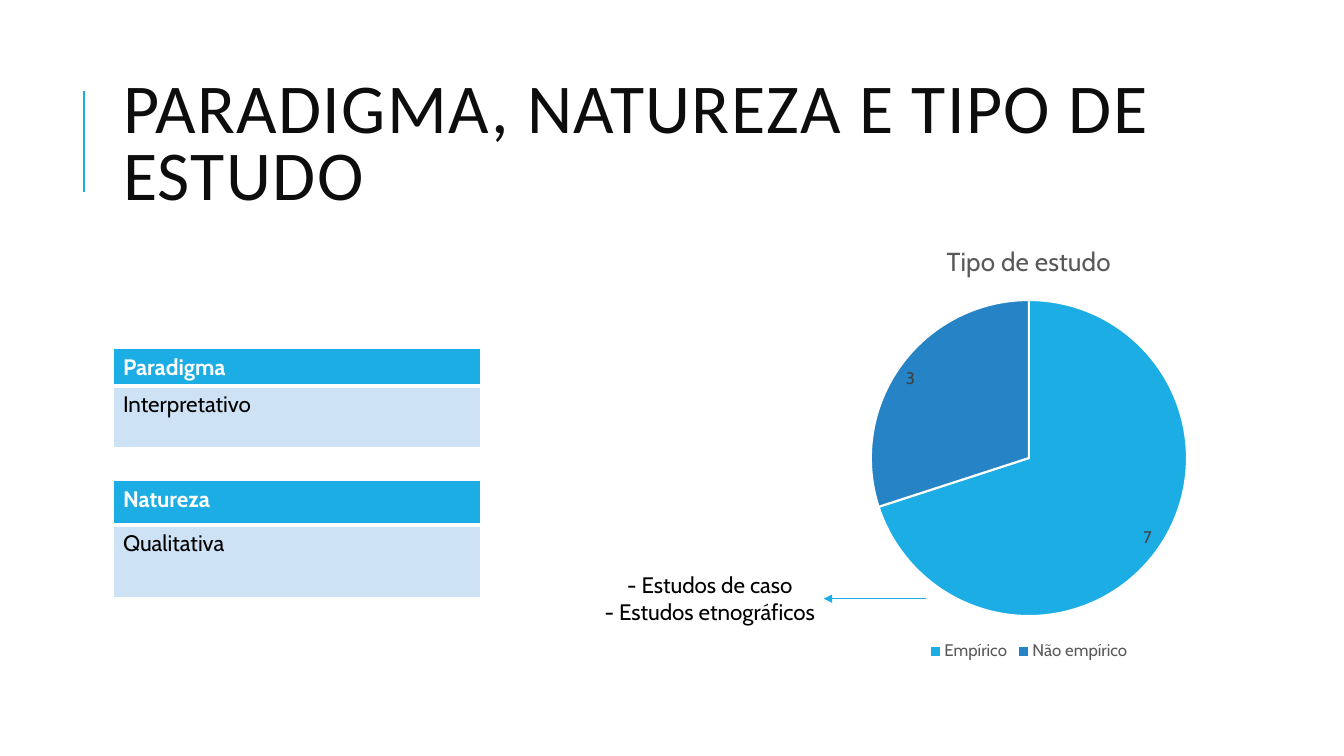
"""Build the slide on paradigm, nature and type of study."""
from dataclasses import dataclass

from lxml import etree
from pptx import Presentation
from pptx import util as u
from pptx.chart import data as cd
from pptx.dml import color
from pptx.enum import chart as ch, shapes, text
from pptx.oxml import ns

ACCENT, DARK_BLUE, PALE, WHITE, BLACK = "1CADE4", "2683C6", "CDE3F5", "FFFFFF", "000000"
BODY_FONT, TITLE_FONT = "Cabin", "Calibri"


@dataclass
class Card:
    heading: str
    value: str
    top: float
    row_heights: tuple[float, float]


@dataclass
class Line:
    start: tuple[float, float]
    end: tuple[float, float]
    width: float
    arrow: bool = False


CARDS = [
    Card("Natureza", "Qualitativa", 4.77, (0.44, 0.72)),
    Card("Paradigma", "Interpretativo", 3.46, (0.37, 0.61)),
]
LINES = [
    Line((0.83, 1.9), (0.83, 0.9), 1.5),
    Line((9.18, 5.94), (8.17, 5.94), 0.75, arrow=True),
]


def rgb(value: str) -> color.RGBColor:
    return color.RGBColor.from_string(value)


def style(font, size: float, hex_color: str, name: str = BODY_FONT, bold: bool = False) -> None:
    font.size, font.name, font.bold = u.Pt(size), name, bold
    font.color.rgb = rgb(hex_color)


def place(sp, left: float, top: float, width: float, height: float) -> None:
    sp.left, sp.top = u.Inches(left), u.Inches(top)
    sp.width, sp.height = u.Inches(width), u.Inches(height)


def add_title(s) -> None:
    sp = s.shapes.title
    place(sp, 1.12, 0.64, 10.63, 1.64)
    tf = sp.text_frame
    tf.word_wrap, tf.auto_size = True, text.MSO_AUTO_SIZE.NONE
    tf.vertical_anchor = text.MSO_ANCHOR.MIDDLE
    p = tf.paragraphs[0]
    p.alignment, p.line_spacing = text.PP_ALIGN.LEFT, 0.8
    r = p.add_run()
    r.text = "PARADIGMA, NATUREZA E TIPO DE ESTUDO"
    style(r.font, 50, "0D0D0D", TITLE_FONT)
    r.font._element.set("spc", "100")


def add_line(s, line: Line) -> None:
    sp = s.shapes.add_connector(
        shapes.MSO_CONNECTOR.STRAIGHT, *map(u.Inches, line.start + line.end))
    sp.line.color.rgb, sp.line.width = rgb(ACCENT), u.Pt(line.width)
    if line.arrow:
        etree.SubElement(sp.line._get_or_add_ln(), ns.qn("a:tailEnd"), type="triangle")
    etree.SubElement(sp._element.spPr, ns.qn("a:effectLst"))


def add_borders(cell, bottom: float) -> None:
    tc_pr = cell._tc.get_or_add_tcPr()
    top = 4 - bottom if cell._tc.row_idx else 1
    top = 3 if cell._tc.row_idx else top
    for i, (side, width) in enumerate(zip("LRTB", (1, 1, top, bottom))):
        ln = etree.Element(ns.qn(f"a:ln{side}"), w=str(u.Pt(width)))
        fill = etree.SubElement(ln, ns.qn("a:solidFill"))
        etree.SubElement(fill, ns.qn("a:srgbClr"), val=WHITE)
        tc_pr.insert(i, ln)


def add_card(s, card: Card) -> None:
    frame = s.shapes.add_table(2, 1, u.Inches(1.12), u.Inches(card.top),
                               u.Inches(3.65), u.Inches(sum(card.row_heights)))
    rows = [(card.heading, ACCENT, WHITE, True, 3), (card.value, PALE, BLACK, False, 1)]
    for i, (words, fill, ink, bold, bottom) in enumerate(rows):
        frame.table.rows[i].height = u.Inches(card.row_heights[i])
        cell = frame.table.cell(i, 0)
        cell.fill.solid()
        cell.fill.fore_color.rgb = rgb(fill)
        r = cell.text_frame.paragraphs[0].add_run()
        r.text = words
        style(r.font, 16, ink, bold=bold)
        add_borders(cell, bottom)


def add_study_chart(s) -> None:
    data = cd.CategoryChartData()
    data.categories = ["Empírico", "Não empírico"]
    data.add_series("Tipo de estudo", (7, 3))
    box = map(u.Inches, (5.54, 2.23, 9.33, 4.37))
    chart = s.shapes.add_chart(ch.XL_CHART_TYPE.PIE, *box, data).chart
    style(chart.font, 10, BLACK)
    chart.has_title = True
    r = chart.chart_title.text_frame.paragraphs[0].add_run()
    r.text = "Tipo de estudo"
    style(r.font, 18.6, "595959")
    chart.chart_title.include_in_layout = False
    chart.has_legend = True
    chart.legend.position = ch.XL_LEGEND_POSITION.BOTTOM
    chart.legend.include_in_layout = False
    style(chart.legend.font, 12, "595959")
    plot = chart.plots[0]
    plot.vary_by_categories = True
    for i, fill in enumerate((ACCENT, DARK_BLUE)):
        fmt = plot.series[0].points[i].format
        fmt.fill.solid()
        fmt.fill.fore_color.rgb = rgb(fill)
        fmt.line.color.rgb, fmt.line.width = rgb(WHITE), u.Pt(1.5)
    labels = plot.series[0].data_labels
    labels.show_value = True
    labels.position = ch.XL_LABEL_POSITION.INSIDE_END
    style(labels.font, 12, "404040")


def add_examples(s) -> None:
    sp = s.shapes.add_textbox(*map(u.Inches, (5.54, 5.62, 3, 0.64)))
    tf = sp.text_frame
    tf.word_wrap, tf.auto_size = True, text.MSO_AUTO_SIZE.SHAPE_TO_FIT_TEXT
    for i, words in enumerate(("- Estudos de caso", "- Estudos etnográficos")):
        p = tf.add_paragraph() if i else tf.paragraphs[0]
        p.alignment = text.PP_ALIGN.CENTER
        r = p.add_run()
        r.text = words
        style(r.font, 16, BLACK)


def main() -> None:
    prs = Presentation()
    prs.slide_width, prs.slide_height = u.Inches(13.33), u.Inches(7.5)
    s = prs.slides.add_slide(prs.slide_layouts[5])
    add_title(s)
    add_study_chart(s)
    for card in CARDS:
        add_card(s, card)
    add_examples(s)
    for line in LINES:
        add_line(s, line)
    prs.save("out.pptx")


if __name__ == "__main__":
    main()
